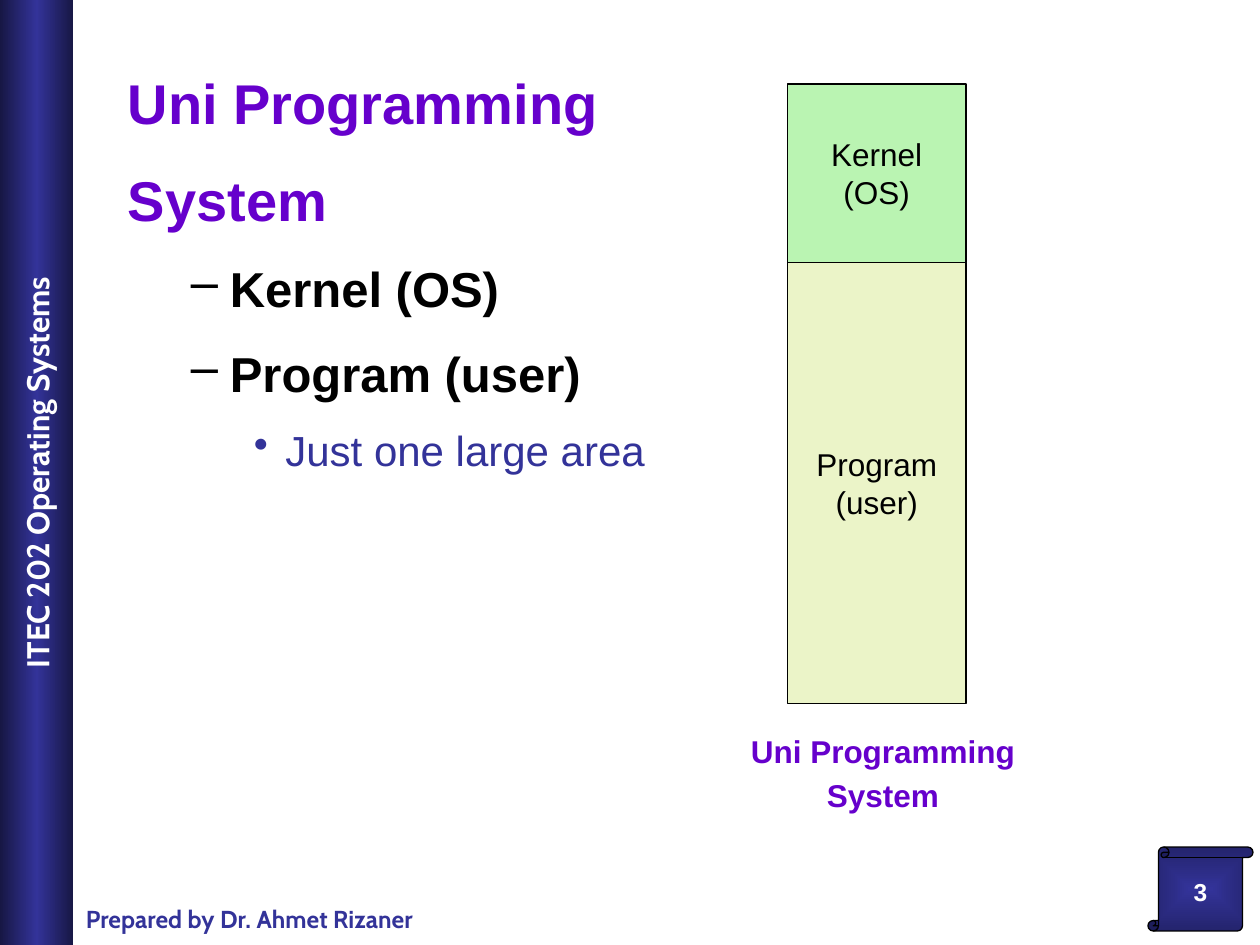
from lxml import etree
from pptx import Presentation
from pptx.dml.color import RGBColor
from pptx.enum.shapes import MSO_SHAPE
from pptx.enum.text import MSO_ANCHOR, MSO_AUTO_SIZE, PP_ALIGN
from pptx.oxml import parse_xml
from pptx.oxml.ns import qn
from pptx.util import Inches, Pt

RECTANGLE = MSO_SHAPE.RECTANGLE
SCROLL = MSO_SHAPE.VERTICAL_SCROLL
CENTER = PP_ALIGN.CENTER
LEFT = PP_ALIGN.LEFT
MIDDLE = MSO_ANCHOR.MIDDLE
GROW = MSO_AUTO_SIZE.SHAPE_TO_FIT_TEXT

CELLS_PER_INCH = 12
DRAWING_NS = "http://schemas.openxmlformats.org/drawingml/2006/main"
LINE_HEIGHT = 1.15
BLACK, WHITE, BLUE, PURPLE = "000000", "FFFFFF", "333399", "6600CC"

LINEAR = '<a:lin ang="5400000" scaled="0"/>'
FROM_CENTER = (
    '<a:path path="rect">'
    '<a:fillToRect l="50000" t="50000" r="50000" b="50000"/></a:path>'
)

OUTLINE_LEVELS = [
    {"bullet": None, "margin": 0.38, "indent": -0.38, "size": 32, "color": PURPLE, "bold": True},
    {"bullet": "–", "margin": 0.81, "indent": -0.31, "size": 28, "color": BLACK, "bold": True},
    {"bullet": "•", "margin": 1.25, "indent": -0.25, "size": 24, "color": BLUE, "bold": False},
]
OUTLINE = [
    (0, "Uni Programming"),
    (0, "System"),
    (1, "Kernel (OS)"),
    (1, "Program (user)"),
    (2, "Just one large area"),
]
MEMORY_AREAS = [
    (["Kernel", "(OS)"], 17, "BAF4B2"),
    (["Program", "(user)"], 42, "EBF4C8"),
]


def cells(*counts):
    return [Inches(count / CELLS_PER_INCH) for count in counts]


def rgb(color):
    return RGBColor.from_string(color)


def set_font(paragraph, size, color, bold=False, name="Arial"):
    font = paragraph.font
    font.name = name
    font.size = Pt(size)
    font.bold = bold
    font.color.rgb = rgb(color)


def write_lines(frame, lines, size, color, bold=False, name="Arial", align=CENTER, gap=0):
    for number, line in enumerate(lines):
        para = frame.add_paragraph() if number else frame.paragraphs[0]
        para.text = line
        para.alignment = align
        if number and gap:
            para.space_before = Pt(gap)
        set_font(para, size, color, bold, name)


def add_block(page, kind, place):
    block = page.shapes.add_shape(kind, *cells(*place))
    block.shadow.inherit = False
    block.text_frame.vertical_anchor = MIDDLE
    block.text_frame.word_wrap = False
    return block


def outline_block(block):
    block.line.color.rgb = rgb(BLACK)
    block.line.width = Pt(0.75)


def set_gradient(block, stops, direction):
    block.fill.gradient()
    gradient = block.fill._xPr.find(qn("a:gradFill"))
    marks = "".join(
        f'<a:gs pos="{position * 1000}"><a:srgbClr val="{color}"/></a:gs>'
        for position, color in stops
    )
    new_gradient = parse_xml(
        f'<a:gradFill xmlns:a="{DRAWING_NS}" rotWithShape="1">'
        f"<a:gsLst>{marks}</a:gsLst>{direction}</a:gradFill>"
    )
    gradient.getparent().replace(gradient, new_gradient)


def add_side_bar(page):
    bar = add_block(page, RECTANGLE, (-41.5, 41.5, 90, 7))
    bar.rotation = 270
    bar.line.fill.background()
    set_gradient(bar, [(0, "171744"), (50, BLUE), (100, "171744")], LINEAR)
    write_lines(bar.text_frame, ["ITEC 202 Operating Systems"], 18, WHITE, True, "Cabin")


def add_page_number(page):
    scroll = add_block(page, SCROLL, (109.33, 80.67, 10, 8))
    scroll.adjustments[0] = 0.125
    outline_block(scroll)
    set_gradient(scroll, [(0, BLUE), (100, "24246D")], FROM_CENTER)
    write_lines(scroll.text_frame, ["3"], 14, WHITE, True)


def add_label(page, place, lines, **style):
    box = page.shapes.add_textbox(*cells(*place))
    box.text_frame.word_wrap = False
    box.text_frame.auto_size = GROW
    write_lines(box.text_frame, lines, bold=True, **style)


def set_indent(para, level):
    properties = para._p.get_or_add_pPr()
    properties.set("marL", str(Inches(level["margin"])))
    properties.set("indent", str(Inches(level["indent"])))
    if level["bullet"]:
        bullet = etree.SubElement(properties, qn("a:buChar"))
        bullet.set("char", level["bullet"])
    else:
        etree.SubElement(properties, qn("a:buNone"))


def add_outline(page, place):
    frame = page.shapes.add_textbox(*cells(*place)).text_frame
    frame.word_wrap = True
    for number, (depth, line) in enumerate(OUTLINE):
        level = OUTLINE_LEVELS[depth]
        para = frame.add_paragraph() if number else frame.paragraphs[0]
        para.text = line
        para.level = depth
        set_indent(para, level)
        para.line_spacing = LINE_HEIGHT
        if number:
            para.space_before = Pt(round(level["size"] * 0.3 * LINE_HEIGHT))
        set_font(para, level["size"], level["color"], level["bold"])


def add_memory(page, left, top, width):
    for lines, height, color in MEMORY_AREAS:
        area = add_block(page, RECTANGLE, (left, top, width, height))
        area.fill.solid()
        area.fill.fore_color.rgb = rgb(color)
        outline_block(area)
        write_lines(area.text_frame, lines, 18, BLACK)
        top += height


def main():
    deck = Presentation()
    deck.slide_width, deck.slide_height = Inches(10), Inches(7.5)
    page = deck.slides.add_slide(deck.slide_layouts[6])
    add_side_bar(page)
    add_label(page, (7, 85.5, 38.9, 4), ["Prepared by Dr. Ahmet Rizaner"],
              size=14, color=BLUE, name="Cabin", align=LEFT)
    add_page_number(page)
    add_outline(page, (11, 5, 71, 76))
    add_memory(page, 75, 8, 17)
    add_label(page, (70.3, 69.1, 27.6, 9.1), ["Uni Programming", "System"],
              size=18, color=PURPLE, gap=4)
    deck.save("out.pptx")


if __name__ == "__main__":
    main()
